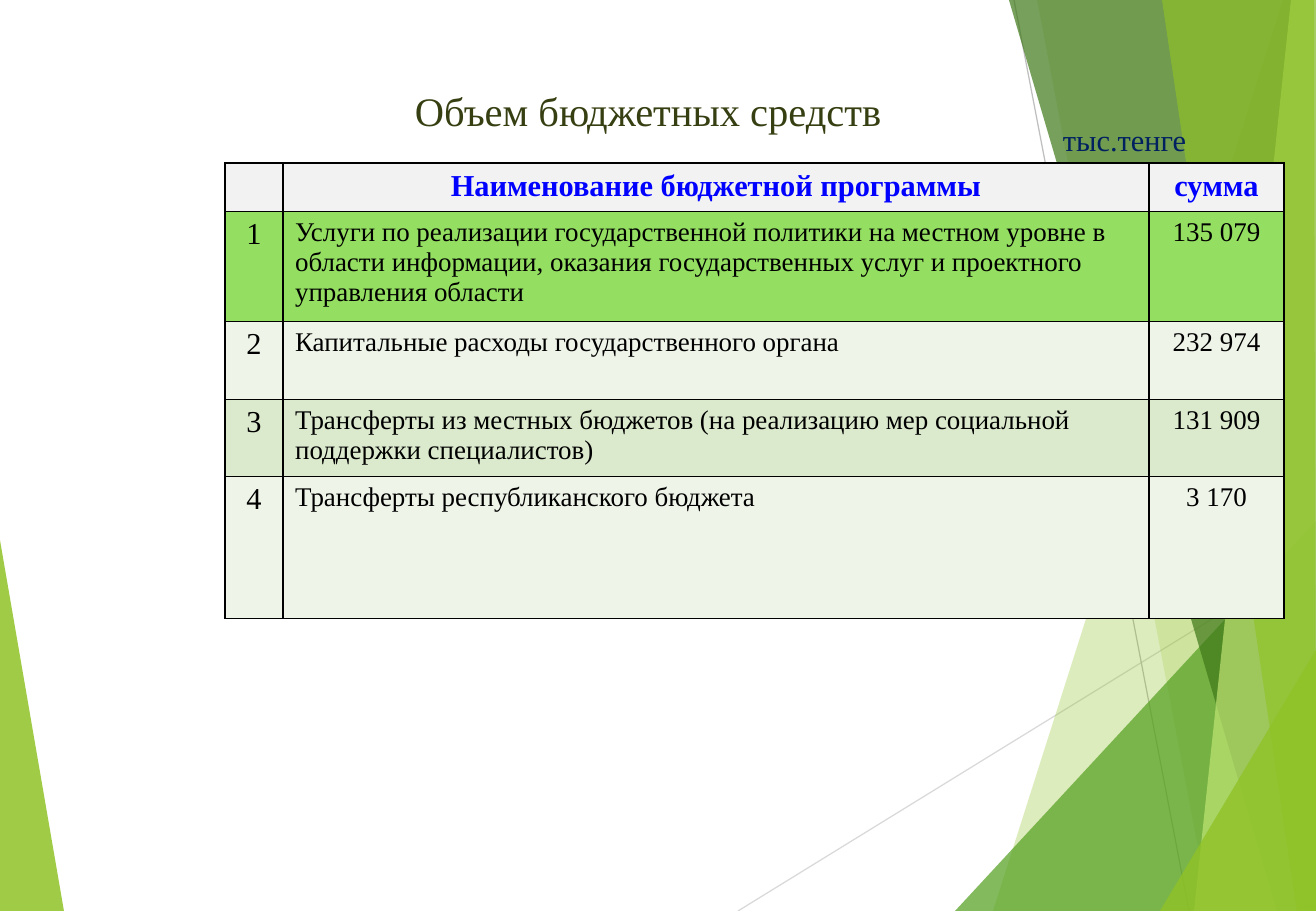
from lxml import etree
from pptx import Presentation
from pptx import util as u
from pptx.dml.color import RGBColor
from pptx.enum import shapes, text
from pptx.oxml import ns

PX = 914400 / 121.5
WIDTH, HEIGHT = 1316, 911


def px(n):
    return u.Emu(round(n * PX))


def rgb(value):
    return RGBColor.from_string(value)


def add_xml(parent, tag, **attrs):
    return etree.SubElement(parent, ns.qn(tag), attrs)


class Deck:
    font = "Times New Roman"
    border = "000000"

    def __init__(self):
        self.prs = Presentation()
        self.prs.slide_width, self.prs.slide_height = px(WIDTH), px(HEIGHT)
        self.slide = self.prs.slides.add_slide(self.prs.slide_layouts[6])

    def facet(self, points, color, opacity):
        fb = self.slide.shapes.build_freeform(*points[0], scale=PX)
        fb.add_line_segments(points[1:], close=True)
        sp = fb.convert_to_shape()
        sp.shadow.inherit = False
        sp.fill.solid()
        sp.fill.fore_color.rgb = rgb(color)
        sp.line.fill.background()
        clr = sp._element.spPr.find(ns.qn("a:solidFill")).find(ns.qn("a:srgbClr"))
        add_xml(clr, "a:alpha", val=str(opacity * 1000))

    def line(self, x1, y1, x2, y2, color):
        sp = self.slide.shapes.add_connector(
            shapes.MSO_CONNECTOR.STRAIGHT, px(x1), px(y1), px(x2), px(y2))
        sp.line.color.rgb = rgb(color)
        sp.line.width = u.Pt(0.75)
        add_xml(sp._element.spPr, "a:effectLst")

    def put_text(self, tf, words, color, align=text.PP_ALIGN.LEFT, **fmt):
        p = tf.paragraphs[0]
        p.alignment = align
        r = p.add_run()
        r.text = words
        r.font.color.rgb = rgb(color)
        for name, value in {"name": self.font, **fmt}.items():
            setattr(r.font, name, value)

    def label(self, x, y, w, h, words, color, size):
        tf = self.slide.shapes.add_textbox(px(x), px(y), px(w), px(h)).text_frame
        tf.word_wrap = False
        tf.auto_size = text.MSO_AUTO_SIZE.SHAPE_TO_FIT_TEXT
        self.put_text(tf, words, color, size=u.Pt(size))

    def cell(self, cell, fill):
        tc_pr = cell._tc.get_or_add_tcPr()
        for side in ("a:lnL", "a:lnR", "a:lnT", "a:lnB"):
            ln = add_xml(tc_pr, side, w="12700")
            add_xml(add_xml(ln, "a:solidFill"), "a:srgbClr", val=self.border)
        cell.fill.solid()
        cell.fill.fore_color.rgb = rgb(fill)

    def table(self, x, y, widths, heights, rows, fills):
        table = self.slide.shapes.add_table(
            len(rows), len(widths), px(x), px(y),
            px(sum(widths)), px(sum(heights))).table
        for column, width in zip(table.columns, widths):
            column.width = px(width)
        for i, (row, values) in enumerate(zip(table.rows, rows)):
            row.height = px(heights[i])
            for j, words in enumerate(values):
                cell = row.cells[j]
                self.cell(cell, fills[i])
                header = i == 0
                if words:
                    self.put_text(
                        cell.text_frame, words, "0000FF" if header else "000000",
                        text.PP_ALIGN.CENTER if header or j != 1 else text.PP_ALIGN.LEFT,
                        size=u.Pt(18 if header or j == 0 else 16), bold=header)


FACETS = [
    ([(1283, 0), (993, HEIGHT), (WIDTH, HEIGHT), (WIDTH, 0)], "90C226", 30),
    ([(1037, 0), (1210, HEIGHT), (WIDTH, HEIGHT), (WIDTH, 0)], "90C226", 20),
    ([(955, HEIGHT), (WIDTH, 521), (WIDTH, HEIGHT)], "54A021", 72),
    ([(1009, 0), (1277, HEIGHT), (WIDTH, HEIGHT), (WIDTH, 0)], "3F7819", 70),
    ([(1291, 0), (1194, HEIGHT), (WIDTH, HEIGHT), (WIDTH, 0)], "C0E474", 70),
    ([(1162, 0), (1297, HEIGHT), (WIDTH, HEIGHT), (1314, 0)], "90C226", 65),
    ([(1160, HEIGHT), (WIDTH, 650), (WIDTH, HEIGHT)], "90C226", 80),
]

PROGRAMS = [
    ("", "Наименование бюджетной программы", "сумма"),
    ("1", "Услуги по реализации государственной политики на местном уровне в "
          "области информации, оказания государственных услуг и проектного "
          "управления области", "135 079"),
    ("2", "Капитальные расходы государственного органа", "232 974"),
    ("3", "Трансферты из местных бюджетов (на реализацию мер социальной "
          "поддержки специалистов)", "131 909"),
    ("4", "Трансферты республиканского бюджета", "3 170"),
]


def main():
    deck = Deck()
    deck.facet([(0, 540), (64, HEIGHT), (0, HEIGHT)], "90C226", 85)
    deck.line(738, HEIGHT, WIDTH, 555, "D9D9D9")
    deck.line(1014, 0, 1189, HEIGHT, "BFBFBF")
    for facet in FACETS:
        deck.facet(*facet)
    deck.label(403, 80, 496, 61, "Объем бюджетных средств", "363F11", 24)
    deck.table(225, 163, (58, 866, 135), (48, 110, 78, 77, 142), PROGRAMS,
               ("F2F2F2", "94DE61", "EEF4E8", "DBE9CD", "EEF4E8"))
    deck.label(1051, 115, 149, 49, "тыс.тенге", "002060", 18)
    deck.prs.save("out.pptx")


if __name__ == "__main__":
    main()
